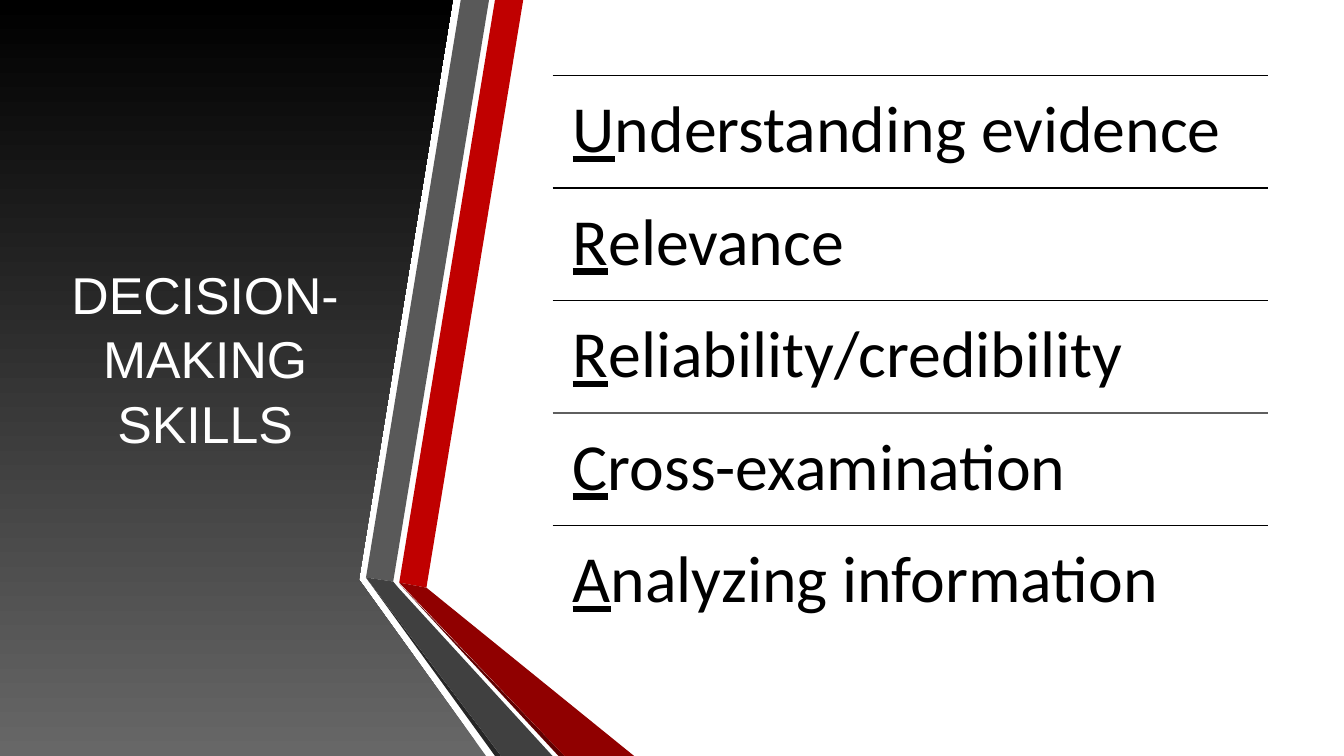
from lxml import etree
from pptx import Presentation
from pptx.dml.color import RGBColor
from pptx.enum.shapes import MSO_CONNECTOR
from pptx.enum.text import MSO_ANCHOR, MSO_AUTO_SIZE, PP_ALIGN
from pptx.oxml.ns import qn
from pptx.util import Inches, Pt

STRAIGHT = MSO_CONNECTOR.STRAIGHT
TOP, MIDDLE = MSO_ANCHOR.TOP, MSO_ANCHOR.MIDDLE
CENTER = PP_ALIGN.CENTER
NO_AUTOFIT = MSO_AUTO_SIZE.NONE

WHITE = RGBColor(0xFF, 0xFF, 0xFF)
BLACK = RGBColor(0x00, 0x00, 0x00)
PANEL_GRAY = RGBColor(0x67, 0x67, 0x67)
RULE_GRAY = RGBColor(0x5F, 0x5F, 0x5F)
RED = RGBColor(0xC0, 0x00, 0x00)
DARK_RED = RGBColor(0x90, 0x00, 0x00)
DEEP_RED = RGBColor(0x60, 0x00, 0x00)
GRAY = RGBColor(0x59, 0x59, 0x59)
DARK_GRAY = RGBColor(0x40, 0x40, 0x40)
DEEP_GRAY = RGBColor(0x26, 0x26, 0x26)

TITLE = "DECISION-MAKING SKILLS"
SKILLS = [
    ("Understanding evidence", BLACK),
    ("Relevance", BLACK),
    ("Reliability/credibility", BLACK),
    ("Cross-examination", RULE_GRAY),
    ("Analyzing information", BLACK),
]

PANEL = [(0, 0), (4.49, 0), (3.56, 5.75), (4.82, 7.5), (0, 7.5)]
RIBBONS = [
    (RED, [(3.96, 5.78), (4.23, 5.83), (5.19, 0), (4.91, 0)]),
    (GRAY, [(4.85, 0), (4.57, 0), (3.63, 5.73), (3.9, 5.77)]),
    (DEEP_GRAY, [(3.63, 5.73), (4.91, 7.5), (4.97, 7.5)]),
    (DEEP_RED, [(3.96, 5.79), (5.54, 7.5), (5.6, 7.5)]),
    (DARK_RED, [(3.96, 5.78), (5.6, 7.5), (6.29, 7.5), (4.23, 5.83)]),
    (DARK_GRAY, [(5.48, 7.5), (3.95, 5.83), (3.9, 5.77), (3.63, 5.73),
                 (4.97, 7.5)]),
]

LIST_LEFT, LIST_TOP, LIST_WIDTH = 5.48, 0.75, 7.1
ROW_HEIGHT = 5.58 / len(SKILLS)
ROW_INSET = Inches(0.2)


def add_outline(page, points):
    corners = [(Inches(x), Inches(y)) for x, y in points]
    builder = page.shapes.build_freeform(*corners[0])
    builder.add_line_segments(corners[1:], close=True)
    shape = builder.convert_to_shape()
    shape.shadow.inherit = False
    shape.line.fill.background()
    return shape


def add_panel(page):
    fill = add_outline(page, PANEL).fill
    fill.gradient()
    fill.gradient_angle = 90
    for stop, color in zip(fill.gradient_stops, (PANEL_GRAY, BLACK)):
        stop.color.rgb = color


def place_title(page):
    """Fill the title placeholder and bring it in front of the panel."""
    title = page.shapes.title
    title.left, title.top = Inches(0.59), Inches(0.75)
    title.width, title.height = Inches(2.89), Inches(5.58)
    frame = title.text_frame
    frame.text = TITLE
    frame.word_wrap = True
    frame.auto_size = NO_AUTOFIT
    frame.vertical_anchor = MIDDLE
    para = frame.paragraphs[0]
    para.alignment = CENTER
    para.line_spacing = 1.04
    font = para.runs[0].font
    font.name, font.size = "Arial", Pt(37)
    font.color.rgb = WHITE
    title.element.getparent().append(title.element)


def add_rule(page, top, color):
    left, right = Inches(LIST_LEFT), Inches(LIST_LEFT + LIST_WIDTH)
    rule = page.shapes.add_connector(STRAIGHT, left, top, right, top)
    rule.line.color.rgb = color
    rule.line.width = Pt(1.25)
    etree.SubElement(rule.element.spPr, qn("a:effectLst"))


def add_skill(page, top, skill):
    """Write one skill with its first letter underlined."""
    box = page.shapes.add_textbox(Inches(LIST_LEFT), top,
                                  Inches(LIST_WIDTH), Inches(ROW_HEIGHT))
    frame = box.text_frame
    frame.word_wrap = True
    frame.vertical_anchor = TOP
    frame.margin_left = frame.margin_right = ROW_INSET
    frame.margin_top = frame.margin_bottom = ROW_INSET
    para = frame.paragraphs[0]
    para.line_spacing = 0.9
    for text, underlined in ((skill[0], True), (skill[1:], False)):
        span = para.add_run()
        span.text = text
        span.font.name, span.font.size = "Calibri", Pt(47)
        span.font.color.rgb = BLACK
        span.font.underline = underlined


def main():
    deck = Presentation()
    deck.slide_width, deck.slide_height = Inches(13.33), Inches(7.5)
    page = deck.slides.add_slide(deck.slide_layouts[5])
    page.background.fill.solid()
    page.background.fill.fore_color.rgb = WHITE

    add_panel(page)
    place_title(page)
    for color, points in RIBBONS:
        ribbon = add_outline(page, points)
        ribbon.fill.solid()
        ribbon.fill.fore_color.rgb = color
    for row, (skill, rule_color) in enumerate(SKILLS):
        top = Inches(LIST_TOP + row * ROW_HEIGHT)
        add_rule(page, top, rule_color)
        add_skill(page, top, skill)

    deck.save("out.pptx")


if __name__ == "__main__":
    main()
